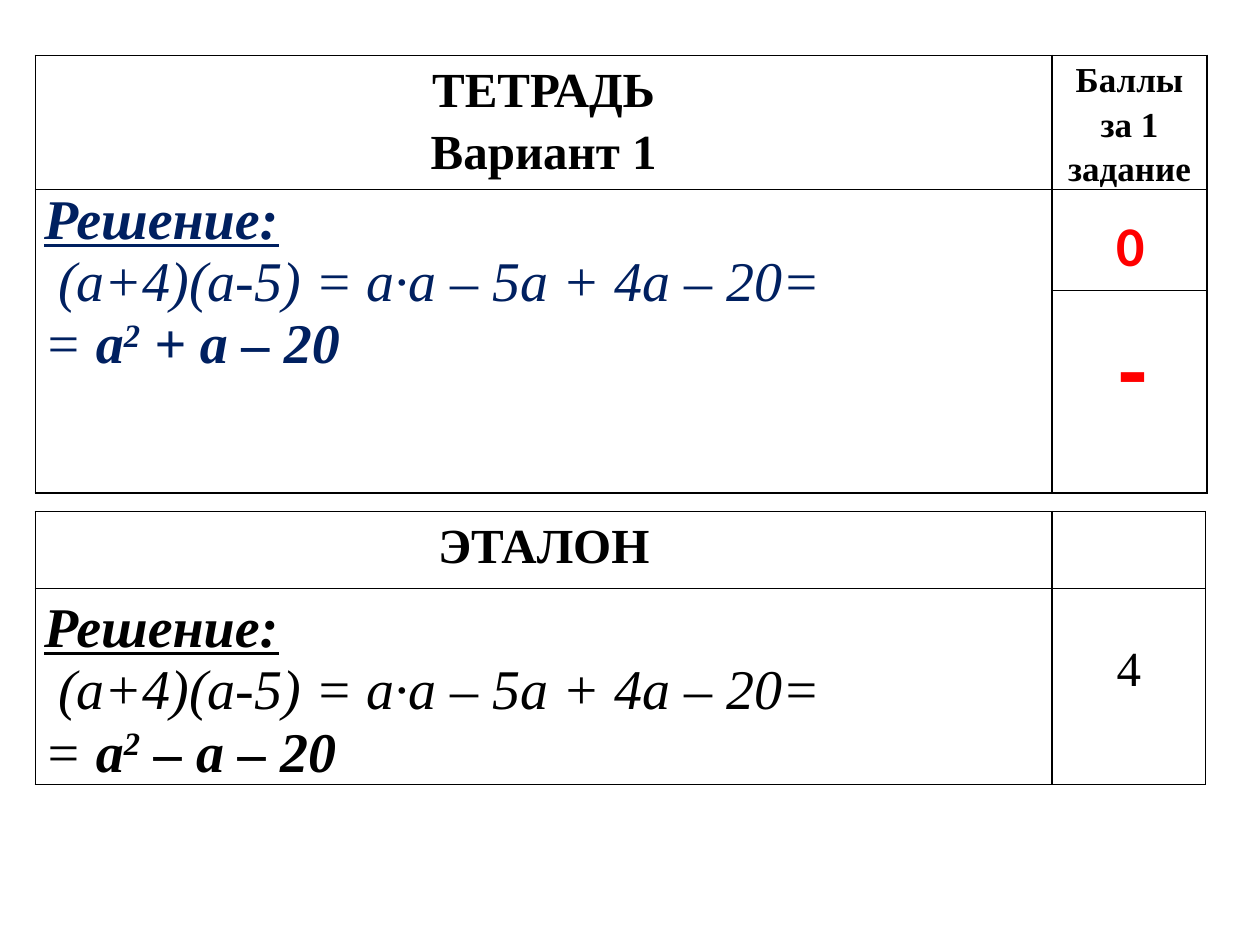
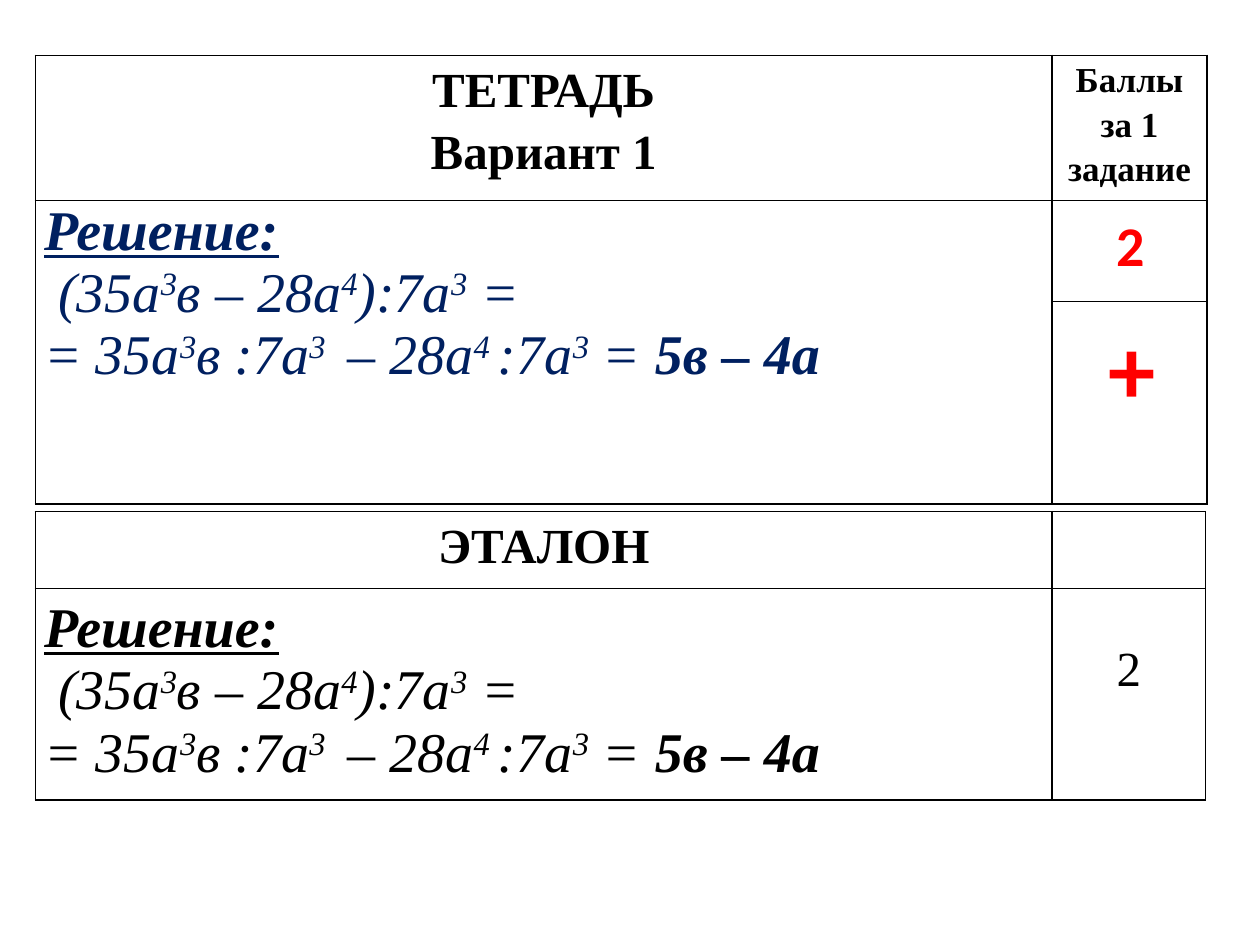
"""Build two slides that compare a pupil's notebook with the model answer."""
from dataclasses import dataclass
from typing import NamedTuple

from lxml import etree
from pptx import Presentation
from pptx.dml.color import RGBColor
from pptx.enum.text import MSO_AUTO_SIZE, PP_ALIGN
from pptx.oxml.ns import qn
from pptx.util import Inches, Pt

CENTER = PP_ALIGN.CENTER
LEFT = PP_ALIGN.LEFT
FIT_SHAPE = MSO_AUTO_SIZE.SHAPE_TO_FIT_TEXT
BLANK_LAYOUT = 6


@dataclass(frozen=True)
class Theme:
    """Colours, fonts and sizes shared by the slides."""
    ink: RGBColor = RGBColor(0, 0, 0)
    pupil: RGBColor = RGBColor(0x00, 0x20, 0x60)
    marker: RGBColor = RGBColor(0xFF, 0, 0)
    serif: str = "Times New Roman"
    sans: str = "Calibri"
    caption: int = 20
    heading: int = 28
    formula: int = 32
    verdict: int = 54
    header_spacing: float = 1.15
    border: int = 1


class Part(NamedTuple):
    """A piece of a formula."""
    text: str
    bold: bool = False
    raised: bool = False
    underline: bool = False


Line = list[Part]


@dataclass(frozen=True)
class Exercise:
    """A solved exercise with the pupil's and the model working."""
    pupil_lines: list[Line]
    model_lines: list[Line]
    full_score: str
    pupil_score: str
    verdict: str
    verdict_left: float


@dataclass(frozen=True)
class Grid:
    """Position and proportions of a table."""
    top: float
    columns: tuple[float, ...]
    rows: tuple[float, ...]
    left: float = 0.28


THEME = Theme()
NOTEBOOK = Grid(0.44, (8.07, 1.23), (1.06, 0.8, 1.61))
MODEL = Grid(4.06, (8.07, 1.22), (0.61, 1.55))
SOLUTION: Line = [Part("Решение:", bold=True, underline=True)]
CUBE = Part("3", raised=True)
FOURTH = Part("4", raised=True)


def product_lines(sign: str) -> list[Line]:
    """Return the expansion of the product, with the sign of its middle term."""
    return [
        [Part(" (а+4)(а-5) = а∙а – 5а + 4а – 20=")],
        [Part("= "), Part("а", bold=True), Part("2", bold=True, raised=True),
         Part(f" {sign} а – 20", bold=True)],
    ]


QUOTIENT_LINES: list[Line] = [
    [Part(" (35а"), CUBE, Part("в – 28а"), FOURTH, Part("):7а"), CUBE, Part(" =")],
    [Part("= 35а"), CUBE, Part("в :7а"), Part("3 ", raised=True), Part(" – 28а"),
     Part("4 ", raised=True), Part(":7а"), CUBE, Part(" = "), Part("5в – 4а", bold=True)],
]

EXERCISES = [
    Exercise(product_lines("+"), product_lines("–"), "4", "0", "-", 8.78),
    Exercise(QUOTIENT_LINES, QUOTIENT_LINES, "2", "2", "+", 8.7),
]


def style_paragraph(paragraph, size: int, color: RGBColor, font: str = THEME.serif,
                    bold: bool | None = None, italic: bool = False,
                    align=LEFT, spacing: float = 1.0) -> None:
    """Set the font and layout that a whole paragraph shares."""
    paragraph.alignment = align
    paragraph.line_spacing = spacing
    paragraph.font.name = font
    paragraph.font.size = Pt(size)
    paragraph.font.color.rgb = color
    paragraph.font.bold = bold
    paragraph.font.italic = italic


def write_centered(cell, lines: list[str], size: int, bold: bool = True) -> None:
    """Write centred lines in a cell."""
    frame = cell.text_frame
    frame.text = "\n".join(lines)
    for paragraph in frame.paragraphs:
        style_paragraph(paragraph, size, THEME.ink, bold=bold, align=CENTER,
                        spacing=THEME.header_spacing)


def write_solution(cell, lines: list[Line], color: RGBColor, title_spacing: float) -> None:
    """Write the solution title and its formula lines in a cell."""
    frame = cell.text_frame
    for index, line in enumerate([SOLUTION, *lines]):
        paragraph = frame.add_paragraph() if index else frame.paragraphs[0]
        style_paragraph(paragraph, THEME.formula, color, italic=True,
                        spacing=1.0 if index else title_spacing)
        for part in line:
            run = paragraph.add_run()
            run.text = part.text
            run.font.bold = part.bold
            run.font.underline = part.underline
            if part.raised:
                run.font._element.set("baseline", "30000")


def frame_cell(cell) -> None:
    """Give a cell narrow margins, thin borders and no fill."""
    cell.margin_left = cell.margin_right = Inches(0.07)
    cell.margin_top = cell.margin_bottom = 0
    properties = cell._tc.get_or_add_tcPr()
    for side in ("a:lnL", "a:lnR", "a:lnT", "a:lnB"):
        edge = etree.SubElement(properties, qn(side), w=str(Pt(THEME.border)))
        fill = etree.SubElement(edge, qn("a:solidFill"))
        etree.SubElement(fill, qn("a:srgbClr"), val=str(THEME.ink))
    cell.fill.background()


def add_grid(slide, grid: Grid):
    """Add an empty bordered table."""
    table = slide.shapes.add_table(
        len(grid.rows), len(grid.columns), Inches(grid.left), Inches(grid.top),
        Inches(sum(grid.columns)), Inches(sum(grid.rows))).table
    table.first_row = table.horz_banding = False
    for column, width in zip(table.columns, grid.columns):
        column.width = Inches(width)
    for row, height in zip(table.rows, grid.rows):
        row.height = Inches(height)
    for cell in table.iter_cells():
        frame_cell(cell)
    return table


def add_mark(slide, text: str, left: float, top: float, width: float,
             height: float, size: int) -> None:
    """Add a teacher's red mark."""
    mark = slide.shapes.add_textbox(Inches(left), Inches(top), Inches(width), Inches(height))
    frame = mark.text_frame
    frame.word_wrap = True
    frame.auto_size = FIT_SHAPE
    frame.text = text
    style_paragraph(frame.paragraphs[0], size, THEME.marker, THEME.sans, bold=True)


def add_exercise(presentation, exercise: Exercise) -> None:
    """Add the slide of one exercise."""
    slide = presentation.slides.add_slide(presentation.slide_layouts[BLANK_LAYOUT])

    notebook = add_grid(slide, NOTEBOOK)
    notebook.cell(1, 0).merge(notebook.cell(2, 0))
    write_centered(notebook.cell(0, 0), ["ТЕТРАДЬ", "Вариант 1"], THEME.heading)
    write_centered(notebook.cell(0, 1), ["Баллы за 1 задание"], THEME.caption)
    write_solution(notebook.cell(1, 0), exercise.pupil_lines, THEME.pupil, 1.0)

    model = add_grid(slide, MODEL)
    write_centered(model.cell(0, 0), ["ЭТАЛОН"], THEME.heading)
    write_solution(model.cell(1, 0), exercise.model_lines, THEME.ink, THEME.header_spacing)
    full_score = model.cell(1, 1)
    full_score.margin_top = Inches(0.37)
    write_centered(full_score, [exercise.full_score], THEME.heading, bold=False)

    add_mark(slide, exercise.verdict, exercise.verdict_left, 2.41, 0.71, 1.01, THEME.verdict)
    add_mark(slide, exercise.pupil_score, 8.76, 1.62, 0.55, 0.64, THEME.formula)


def main() -> None:
    """Build and save the presentation."""
    presentation = Presentation()
    presentation.slide_width = Inches(10)
    presentation.slide_height = Inches(7.5)
    for exercise in EXERCISES:
        add_exercise(presentation, exercise)
    presentation.save("out.pptx")


if __name__ == "__main__":
    main()
